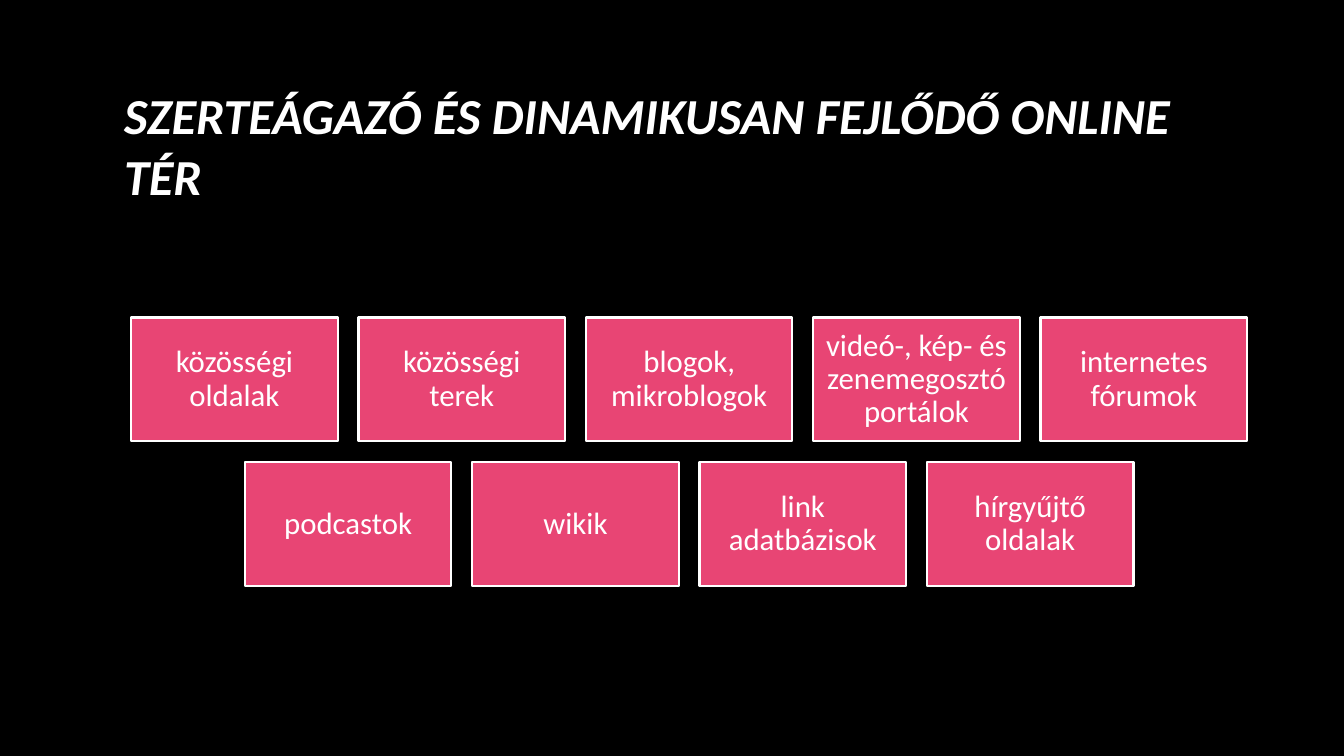
from dataclasses import dataclass

from pptx import Presentation
from pptx.dml.color import RGBColor
from pptx.enum.shapes import MSO_SHAPE
from pptx.enum.text import MSO_ANCHOR, MSO_AUTO_SIZE, PP_ALIGN
from pptx.util import Inches, Pt

RECTANGLE = MSO_SHAPE.RECTANGLE
MIDDLE = MSO_ANCHOR.MIDDLE
NO_AUTOFIT = MSO_AUTO_SIZE.NONE
LEFT, CENTER = PP_ALIGN.LEFT, PP_ALIGN.CENTER
TITLE_ONLY = 5


@dataclass(frozen=True)
class Theme:
    background: RGBColor = RGBColor(0x00, 0x00, 0x00)
    text: RGBColor = RGBColor(0xFF, 0xFF, 0xFF)
    card: RGBColor = RGBColor(0xE8, 0x45, 0x74)
    font: str = "Calibri"
    title_size: int = 36
    card_size: int = 22
    card_line: float = 1.5


THEME = Theme()

TITLE = "SZERTEÁGAZÓ ÉS DINAMIKUSAN FEJLŐDŐ ONLINE TÉR"
CARD_ROWS = [
    [
        "közösségi oldalak",
        "közösségi terek",
        "blogok, mikroblogok",
        "videó-, kép- és zenemegosztó portálok",
        "internetes fórumok",
    ],
    ["podcastok", "wikik", "link adatbázisok", "hírgyűjtő oldalak"],
]

GRID_LEFT, GRID_TOP, GRID_WIDTH = 1.3, 3.15, 11.07
CARD_WIDTH, CARD_HEIGHT = 2.05, 1.23
LONGEST_ROW = max(len(row) for row in CARD_ROWS)
GAP = (GRID_WIDTH - LONGEST_ROW * CARD_WIDTH) / (LONGEST_ROW - 1)


def set_text(sp, text, *, size, align, spacing=1.0, bold=False, italic=False):
    tf = sp.text_frame
    tf.word_wrap = True
    tf.auto_size = NO_AUTOFIT
    tf.vertical_anchor = MIDDLE
    p = tf.paragraphs[0]
    p.alignment = align
    p.line_spacing = spacing
    r = p.add_run()
    r.text = text
    r.font.name = THEME.font
    r.font.size = Pt(size)
    r.font.bold = bold
    r.font.italic = italic
    r.font.color.rgb = THEME.text


def format_title(s):
    sp = s.shapes.title
    sp.left, sp.top = Inches(1.13), Inches(0.64)
    sp.width, sp.height = Inches(11.08), Inches(1.59)
    set_text(sp, TITLE, size=THEME.title_size, align=LEFT, bold=True, italic=True)


def add_card(s, text, left, top):
    sp = s.shapes.add_shape(
        RECTANGLE, Inches(left), Inches(top), Inches(CARD_WIDTH), Inches(CARD_HEIGHT)
    )
    sp.shadow.inherit = False
    sp.fill.solid()
    sp.fill.fore_color.rgb = THEME.card
    sp.line.color.rgb = THEME.text
    sp.line.width = Pt(THEME.card_line)
    tf = sp.text_frame
    tf.margin_left = tf.margin_right = Inches(0.09)
    tf.margin_top = tf.margin_bottom = Inches(0.09)
    set_text(sp, text, size=THEME.card_size, align=CENTER, spacing=0.9)


def add_card_row(s, labels, top):
    row_width = len(labels) * (CARD_WIDTH + GAP) - GAP
    left = GRID_LEFT + (GRID_WIDTH - row_width) / 2
    for i, label in enumerate(labels):
        add_card(s, label, left + i * (CARD_WIDTH + GAP), top)


def main():
    prs = Presentation()
    prs.slide_width, prs.slide_height = Inches(13.33), Inches(7.5)
    s = prs.slides.add_slide(prs.slide_layouts[TITLE_ONLY])
    s.background.fill.solid()
    s.background.fill.fore_color.rgb = THEME.background
    format_title(s)
    for i, labels in enumerate(CARD_ROWS):
        add_card_row(s, labels, GRID_TOP + i * (CARD_HEIGHT + GAP))
    prs.save("out.pptx")


if __name__ == "__main__":
    main()
